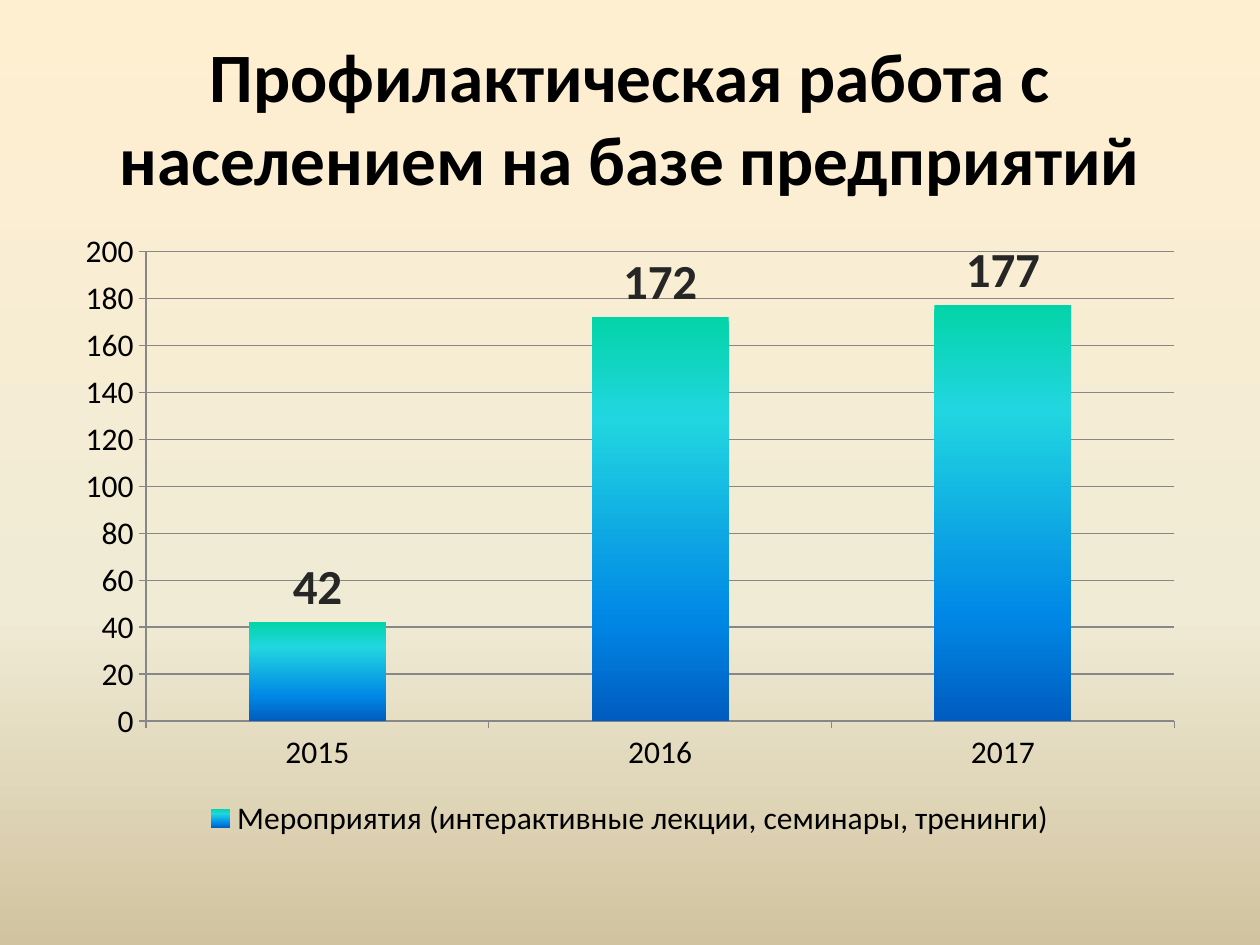
from dataclasses import dataclass

from lxml import etree
from pptx import Presentation
from pptx import util as u
from pptx.chart.data import CategoryChartData
from pptx.dml.color import RGBColor
from pptx.enum import chart as ch, text
from pptx.oxml.ns import qn


@dataclass(frozen=True)
class Theme:
    face: str = "Calibri"
    ink: str = "000000"
    mark: str = "262626"
    rule: str = "878787"
    head: float = 39.6
    body: float = 18
    label: float = 28
    back: tuple = ((0, "FFEFD1"), (65, "F0EBD5"), (100, "D1C39F"))
    bar: tuple = ((0, "03D4A8"), (25, "21D6E0"), (75, "0087E6"), (100, "005CBF"))


THEME = Theme()


def px(n):
    return u.Emu(round(n * 914400 / 126))


def style(font, size, color=THEME.ink, bold=False):
    font.name, font.size, font.bold = THEME.face, u.Pt(size), bold
    font.color.rgb = RGBColor.from_string(color)


def write(frame, words, align=text.PP_ALIGN.CENTER, **fmt):
    frame.word_wrap = True
    frame.vertical_anchor = text.MSO_ANCHOR.MIDDLE
    para = frame.paragraphs[0]
    para.alignment = align
    run = para.add_run()
    run.text = words
    style(run.font, **fmt)


def shade(fill, root, stops):
    """Fill from top to bottom with any number of (percent, colour) stops."""
    fill.gradient()
    fill.gradient_angle = 270
    rows = next(root.iter(qn("a:gsLst")))
    for old in list(rows):
        rows.remove(old)
    for pos, color in stops:
        stop = etree.SubElement(rows, qn("a:gs"), pos=str(pos * 1000))
        etree.SubElement(stop, qn("a:srgbClr"), val=color)


def rule(line):
    line.color.rgb = RGBColor.from_string(THEME.rule)
    line.width = u.Pt(0.75)


def add_bars(slide, box, name, counts):
    data = CategoryChartData()
    data.categories = list(counts)
    data.add_series(name, list(counts.values()))
    kind = ch.XL_CHART_TYPE.COLUMN_CLUSTERED
    chart = slide.shapes.add_chart(kind, *map(px, box), data).chart
    style(chart.font, THEME.body)
    chart.has_title = False
    chart.has_legend = True
    chart.legend.position = ch.XL_LEGEND_POSITION.BOTTOM
    chart.legend.include_in_layout = False

    for axis in (chart.category_axis, chart.value_axis):
        axis.major_tick_mark = ch.XL_TICK_MARK.OUTSIDE
        rule(axis.format.line)
    chart.value_axis.has_major_gridlines = True
    rule(chart.value_axis.major_gridlines.format.line)

    plot = chart.plots[0]
    plot.gap_width = 150
    plot.vary_by_categories = False
    bars = plot.series[0]
    bars.invert_if_negative = False
    shade(bars.format.fill, bars._element, THEME.bar)
    labels = bars.data_labels
    labels.show_value = True
    labels.position = ch.XL_LABEL_POSITION.OUTSIDE_END
    style(labels.font, THEME.label, THEME.mark, bold=True)


def main():
    deck = Presentation()
    deck.slide_width, deck.slide_height = px(1260), px(945)
    slide = deck.slides.add_slide(deck.slide_layouts[5])
    shade(slide.background.fill, slide.element, THEME.back)

    title = slide.shapes.title
    title.left, title.top, title.width, title.height = map(px, (63, 38, 1134, 157))
    write(title.text_frame, "Профилактическая работа с населением на базе предприятий",
          size=THEME.head, bold=True)

    add_bars(slide, (63, 220, 1134, 624),
             "Мероприятия (интерактивные лекции, семинары, тренинги)",
             {"2015": 42, "2016": 172, "2017": 177})
    deck.save("out.pptx")


if __name__ == "__main__":
    main()
